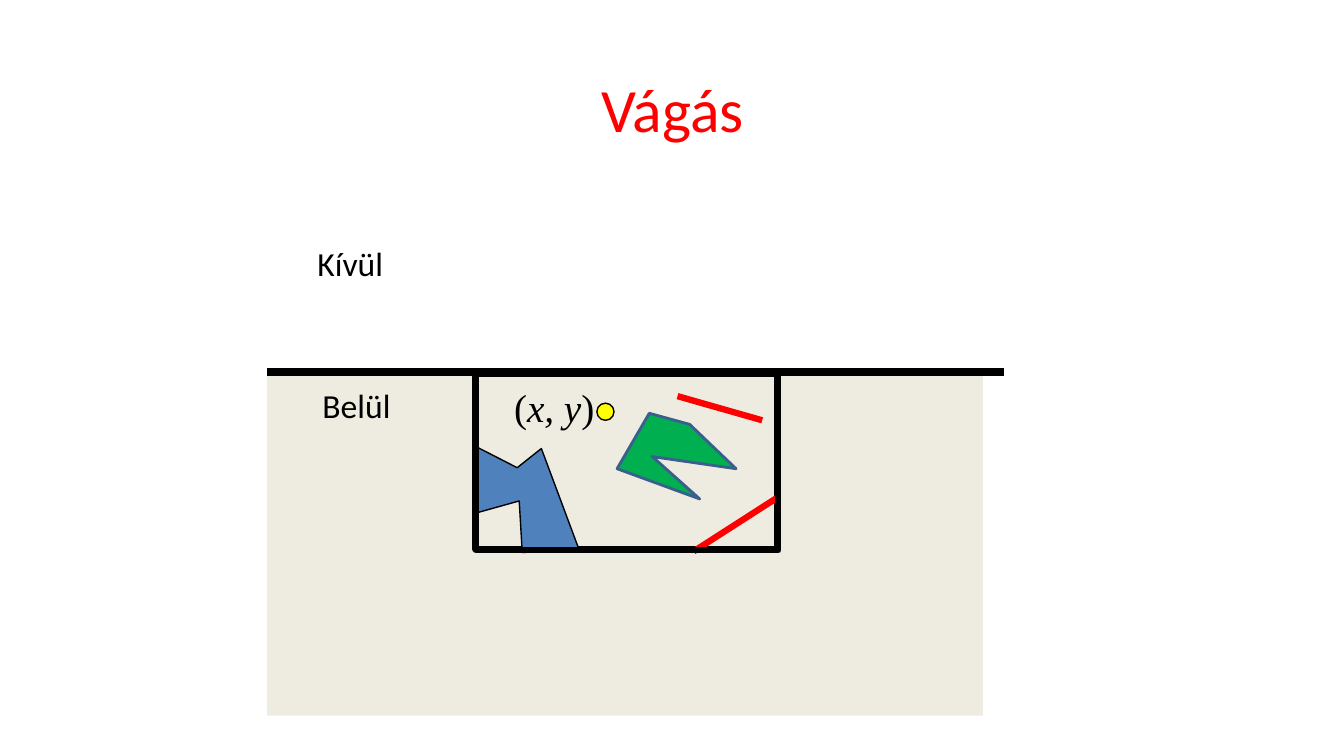
from dataclasses import dataclass
from typing import Optional

import pptx
import pptx.dml.color
import pptx.enum.shapes
import pptx.enum.text
import pptx.oxml
import pptx.oxml.ns
import pptx.util

RGB = pptx.dml.color.RGBColor
Inches = pptx.util.Inches
Pt = pptx.util.Pt
Kind = pptx.enum.shapes.MSO_SHAPE
Fit = pptx.enum.text.MSO_AUTO_SIZE
Align = pptx.enum.text.PP_ALIGN
Anchor = pptx.enum.text.MSO_ANCHOR

BLACK = RGB(0x00, 0x00, 0x00)
RED = RGB(0xFF, 0x00, 0x00)
YELLOW = RGB(0xFF, 0xFF, 0x00)
GREEN = RGB(0x00, 0xB0, 0x50)
BLUE = RGB(0x4F, 0x81, 0xBD)
NAVY = RGB(0x3A, 0x5F, 0x8C)
CREAM = RGB(0xEE, 0xEC, 0xE1)

Point = tuple[float, float]
Box = tuple[float, float, float, float]


@dataclass
class Pen:
    color: RGB
    width: float


@dataclass
class Form:
    kind: Kind
    box: Box
    fill: Optional[RGB] = None
    pen: Optional[Pen] = None


@dataclass
class Poly:
    points: list[Point]
    fill: RGB
    pen: Pen


@dataclass
class Line:
    start: Point
    end: Point
    pen: Pen


@dataclass
class Label:
    box: Box
    runs: list[tuple[str, bool]]
    size: int
    font: str = "Calibri"
    color: RGB = BLACK
    title: bool = False


FRAME = Pen(BLACK, 4.5)
THIN = Pen(BLACK, 1)
STROKE = Pen(RED, 4.5)

ITEMS = [
    Form(Kind.RECTANGLE, (4.73, 3.69, 3, 1.75), CREAM, FRAME),
    Form(Kind.RECTANGLE, (2.65, 3.69, 7.1, 3.41), CREAM),
    Label((2.42, 0.44, 8.5, 1.25), [("Vágás", False)], 44, color=RED, title=True),
    Line((2.65, 3.69), (9.96, 3.69), Pen(BLACK, 6)),
    Form(Kind.RECTANGLE, (4.71, 3.7, 3, 1.75), pen=FRAME),
    Label((3.1, 3.77, 0.88, 0.5), [("Belül", False)], 24),
    Label((3.05, 2.36, 0.86, 0.5), [("Kívül", False)], 24),
    Poly([(4.72, 4.43), (4.72, 5.09), (5.15, 4.97), (5.18, 5.48),
          (5.75, 5.47), (5.37, 4.45), (5.13, 4.64)], BLUE, THIN),
    Line((7.72, 4.93), (6.88, 5.47), STROKE),
    Form(Kind.RECTANGLE, (4.72, 3.71, 3, 1.75), pen=FRAME),
    Form(Kind.OVAL, (5.92, 4, 0.17, 0.17), YELLOW, THIN),
    Label((5, 3.75, 1.01, 0.57),
          [("(", False), ("x, y", True), (")", False)], 28, "Times New Roman"),
    Line((7.56, 4.17), (6.72, 3.93), STROKE),
    Poly([(6.44, 4.1), (6.12, 4.65), (6.94, 4.95), (6.47, 4.53),
          (7.3, 4.65), (6.84, 4.21)], GREEN, Pen(NAVY, 2)),
]


def assign(target: object, values: dict) -> None:
    for name, value in values.items():
        setattr(target, name, value)


def ink(line, pen: Pen) -> None:
    """Give a line the colour and width of a pen."""
    line.color.rgb = pen.color
    line.width = Pt(pen.width)


def paint(shape, fill: Optional[RGB], pen: Optional[Pen]) -> None:
    shape.shadow.inherit = False
    if fill is None:
        shape.fill.background()
    else:
        shape.fill.solid()
        shape.fill.fore_color.rgb = fill
    if pen is None:
        shape.line.fill.background()
    else:
        ink(shape.line, pen)


def draw_form(shapes, form: Form) -> None:
    shape = shapes.add_shape(form.kind, *map(Inches, form.box))
    paint(shape, form.fill, form.pen)


def draw_poly(shapes, poly: Poly) -> None:
    first, *rest = [(Inches(x), Inches(y)) for x, y in poly.points]
    maker = shapes.build_freeform(*first)
    maker.add_line_segments(rest, close=True)
    paint(maker.convert_to_shape(), poly.fill, poly.pen)


def draw_line(shapes, line: Line) -> None:
    kind = pptx.enum.shapes.MSO_CONNECTOR.STRAIGHT
    link = shapes.add_connector(kind, *map(Inches, line.start + line.end))
    ink(link.line, line.pen)
    props = link._element.spPr
    props.append(pptx.oxml.parse_xml(
        f"<a:effectLst {pptx.oxml.ns.nsdecls('a')}/>"))


def draw_label(shapes, label: Label) -> None:
    frame = shapes.add_textbox(*map(Inches, label.box)).text_frame
    para = frame.paragraphs[0]
    if label.title:
        form = {"word_wrap": True, "vertical_anchor": Anchor.MIDDLE}
        para.alignment = Align.CENTER
    else:
        form = {"word_wrap": False, "auto_size": Fit.SHAPE_TO_FIT_TEXT}
    assign(frame, form)
    for text, slant in label.runs:
        run = para.add_run()
        run.text = text
        assign(run.font, {"name": label.font, "size": Pt(label.size),
                          "italic": slant})
        run.font.color.rgb = label.color


DRAW = {Form: draw_form, Poly: draw_poly, Line: draw_line, Label: draw_label}


def main() -> None:
    deck = pptx.Presentation()
    assign(deck, {"slide_width": Inches(13.33), "slide_height": Inches(7.5)})
    slide = deck.slides.add_slide(deck.slide_layouts[6])
    for item in ITEMS:
        DRAW[type(item)](slide.shapes, item)
    deck.save("out.pptx")


if __name__ == "__main__":
    main()
